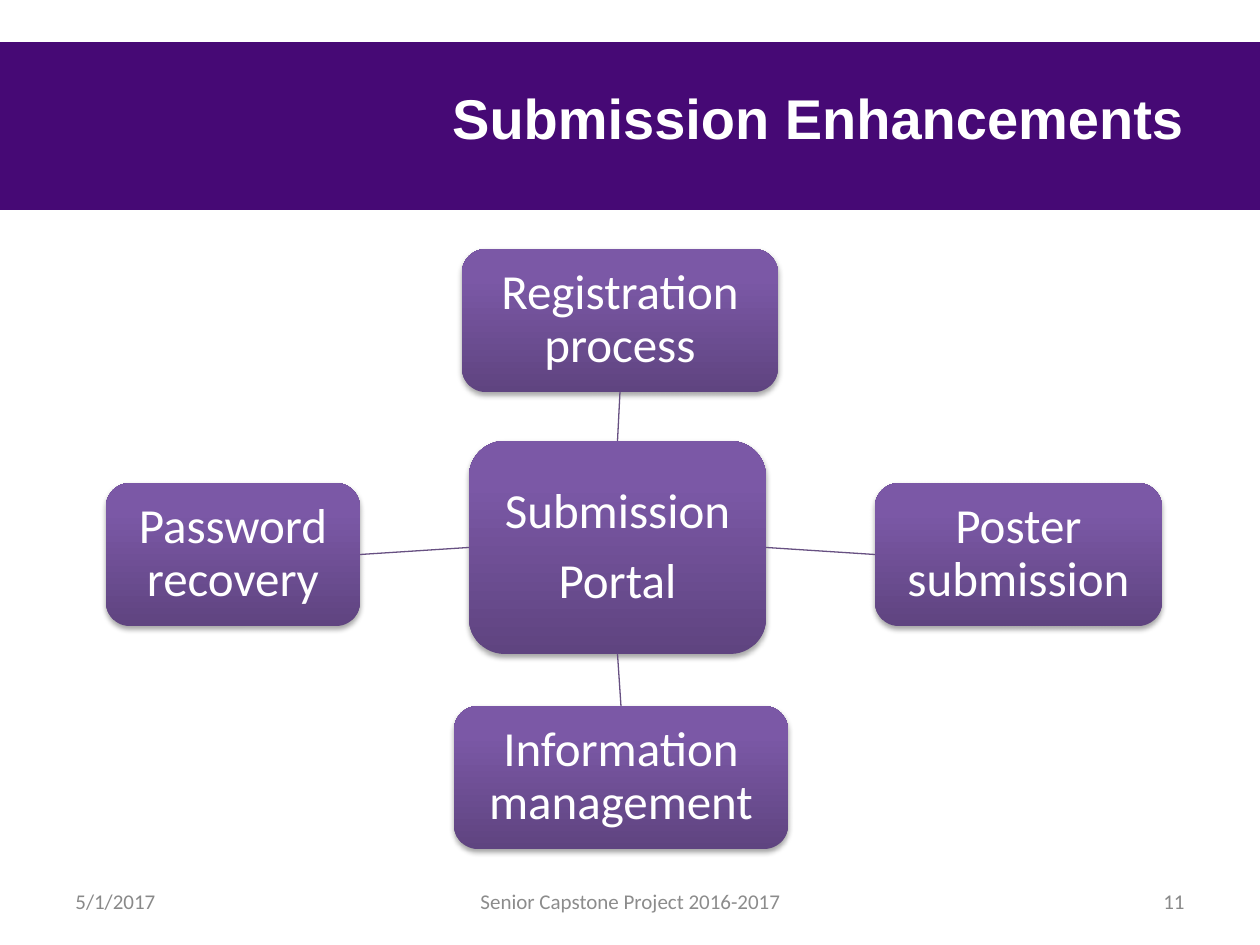
from copy import deepcopy
from dataclasses import dataclass

from lxml import etree
from pptx import Presentation
from pptx import util as u
from pptx.dml.color import RGBColor
from pptx.enum import shapes, text
from pptx.oxml.ns import qn

PX = u.Inches(1) / 126
WHITE, BAND, LINE = "FFFFFF", "460975", "675082"
STOPS = [(0, "5F4480"), (0.8, "7B58A6"), (1, "7C57A8")]
TOP, LEFT, BOTTOM, RIGHT = range(4)
ALIGN = text.PP_ALIGN


@dataclass
class Node:
    words: str
    x: int
    y: int
    w: int
    h: int = 143
    side: int = TOP  # side of the hub it hangs on


@dataclass
class Note:
    words: str
    x: int
    w: int
    align: ALIGN
    hue: str


HUB = Node("Submission\nPortal", 469, 441, 297, 213)
NODES = [
    Node("Registration process", 462, 249, 316, side=TOP),
    Node("Poster submission", 875, 483, 287, side=RIGHT),
    Node("Information management", 454, 706, 334, side=BOTTOM),
    Node("Password recovery", 106, 483, 254, side=LEFT),
]
NOTES = [
    Note("5/1/2017", 63, 294, ALIGN.LEFT, "898989"),
    Note("Senior Capstone Project 2016-2017", 431, 399, ALIGN.CENTER, "8C8C8C"),
    Note("11", 903, 294, ALIGN.RIGHT, "898989"),
]


def px(*vals: int) -> list[u.Emu]:
    return [u.Emu(round(v * PX)) for v in vals]


def rgb(hue: str) -> RGBColor:
    return RGBColor.from_string(hue)


def write(shape, words: str, size: int, hue: str, align: ALIGN,
          face: str = "Calibri", bold: bool = False) -> None:
    frame = shape.text_frame
    frame.text = words
    frame.word_wrap = True
    frame.vertical_anchor = text.MSO_ANCHOR.MIDDLE
    for para in frame.paragraphs:
        para.alignment = align
        for run in para.runs:
            font = run.font
            font.name, font.size, font.bold = face, u.Pt(size), bold
            font.color.rgb = rgb(hue)


def shade(shape) -> None:
    """Three-stop gradient, dark at the foot, with a soft shadow below."""
    fill = shape.fill
    fill.gradient()
    fill.gradient_angle = 90
    props = shape._element.spPr
    stops = props.find(".//" + qn("a:gsLst"))
    stops.append(deepcopy(stops[0]))
    for stop, (pos, hue) in zip(fill.gradient_stops, STOPS):
        stop.position, stop.color.rgb = pos, rgb(hue)

    shape.shadow.inherit = False
    glow = etree.SubElement(
        props.find(qn("a:effectLst")), qn("a:outerShdw"),
        blurRad=str(u.Pt(3.1)), dist=str(u.Pt(1.8)), dir="5400000", rotWithShape="0")
    tint = etree.SubElement(glow, qn("a:srgbClr"), val="000000")
    etree.SubElement(tint, qn("a:alpha"), val="35000")


def draw_node(slide, node: Node):
    box = slide.shapes.add_shape(
        shapes.MSO_SHAPE.ROUNDED_RECTANGLE, *px(node.x, node.y, node.w, node.h))
    shade(box)
    box.line.fill.background()
    write(box, node.words, 28, WHITE, ALIGN.CENTER)
    frame = box.text_frame
    frame.margin_left, frame.margin_top, frame.margin_right, frame.margin_bottom = px(*[10] * 4)
    for para in frame.paragraphs:
        para.line_spacing, para.space_after = 0.9, u.Pt(9.8)
    return box


def join(slide, hub, box, side: int) -> None:
    link = slide.shapes.add_connector(shapes.MSO_CONNECTOR.STRAIGHT, 0, 0, 0, 0)
    link.begin_connect(hub, side)
    link.end_connect(box, (side + 2) % 4)
    link.line.color.rgb, link.line.width = rgb(LINE), u.Pt(0.75)
    etree.SubElement(link._element.spPr, qn("a:effectLst"))


def draw_note(slide, note: Note) -> None:
    box = slide.shapes.add_textbox(*px(note.x, 876, note.w, 50))
    write(box, note.words, 12, note.hue, note.align)


def main() -> None:
    deck = Presentation()
    deck.slide_width, deck.slide_height = px(1260, 945)
    slide = deck.slides.add_slide(deck.slide_layouts[5])

    # Band behind the title
    band = slide.shapes.add_shape(shapes.MSO_SHAPE.RECTANGLE, *px(-32, 42, 1324, 168))
    band.shadow.inherit = False
    band.fill.solid()
    band.fill.fore_color.rgb = rgb(BAND)
    band.line.fill.background()
    slide.shapes._spTree.insert(2, band._element)

    # Title
    title = slide.shapes.title
    title.left, title.top, title.width, title.height = px(315, 38, 882, 158)
    write(title, "Submission Enhancements", 32, WHITE, ALIGN.RIGHT, "Arial", True)

    # Footer
    for note in NOTES:
        draw_note(slide, note)

    # Hub and its four spokes
    hub = draw_node(slide, HUB)
    for node in NODES:
        join(slide, hub, draw_node(slide, node), node.side)

    deck.save("out.pptx")


if __name__ == "__main__":
    main()
